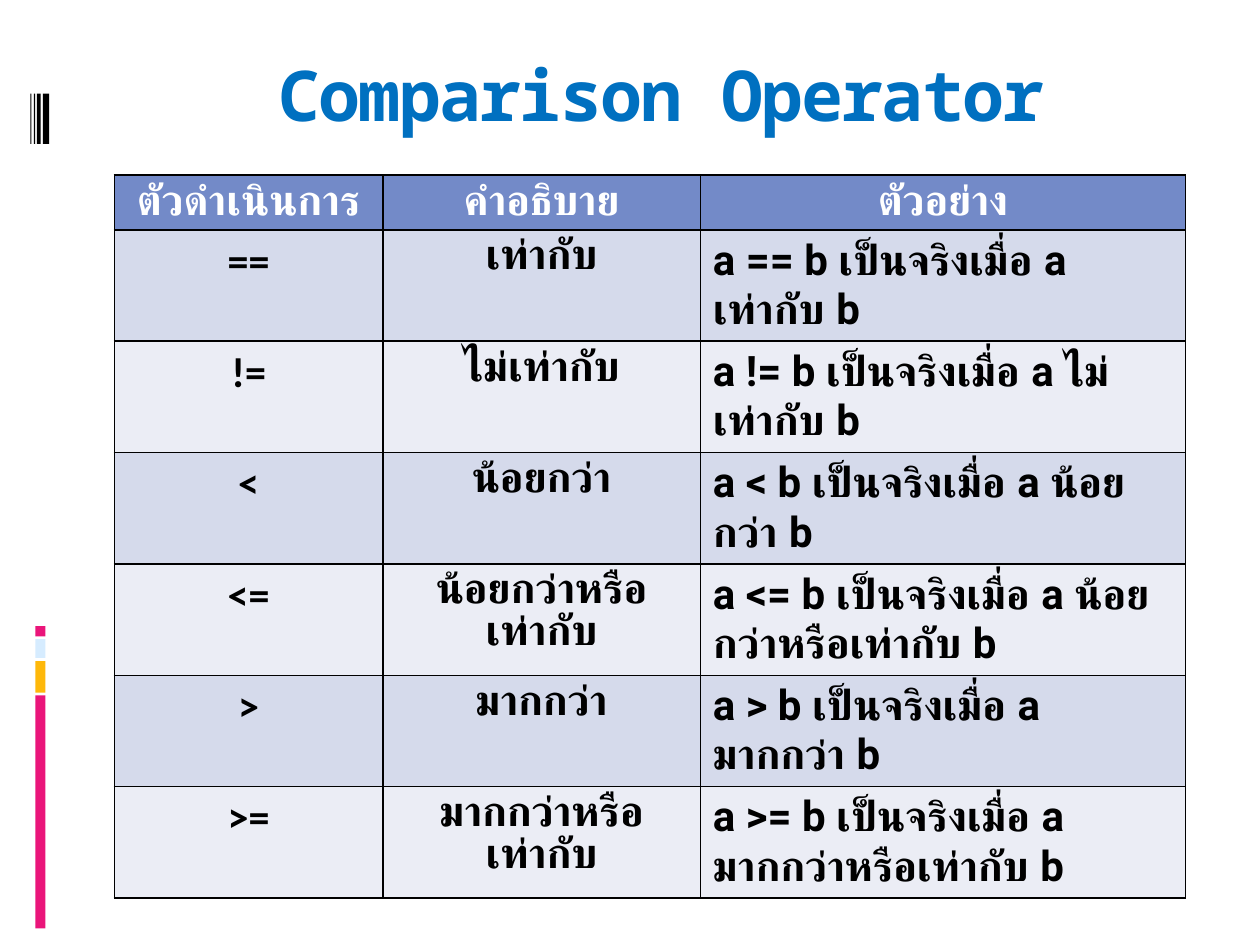
from lxml.etree import SubElement
from pptx import Presentation
from pptx.dml.color import RGBColor
from pptx.enum.shapes import MSO_SHAPE as Shape
from pptx.enum.text import MSO_ANCHOR as Anchor, PP_ALIGN as Align
from pptx.oxml.ns import qn
from pptx.util import Pt

# Content
TITLE = "Comparison Operator"
HEADERS = ["ตัวดำเนินการ", "คำอธิบาย", "ตัวอย่าง"]
OPERATORS = [
    ("==", "เท่ากับ"),
    ("!=", "ไม่เท่ากับ"),
    ("<", "น้อยกว่า"),
    ("<=", "น้อยกว่าหรือเท่ากับ"),
    (">", "มากกว่า"),
    (">=", "มากกว่าหรือเท่ากับ"),
]

THEME = {
    "title": "0070C0", "header": "738AC8", "bands": ("D5DAEB", "EBEDF5"),
    "black": "000000", "white": "FFFFFF",
    "pink": "EA157A", "amber": "FEB80A", "sky": "D6ECFF",
    "title_font": "Noto Sans Mono", "body_font": "Roboto", "symbol_font": "Calibri",
    "title_size": 40, "body_size": 24,
}

# Layout in points
COLUMN_WIDTHS = [153.36, 181.44, 277.2]
ROW_HEIGHT = 29.5
TABLE_LEFT, TABLE_TOP, TABLE_HEIGHT = 65.4, 100.1, 424.8
ACCENT_LEFT, ACCENT_WIDTH = 20.2, 5.8
ACCENTS = [("pink", 397.4, 133.2), ("amber", 377.8, 18),
           ("sky", 365.2, 10.8), ("pink", 357.8, 5.8)]  # colour, top, height
STRIPE_TOP, STRIPE_HEIGHT = 53.5, 28.8
STRIPES = [(24.5, 3.6), (21.1, 2.2), (19.4, 0.7), (17.3, 0.7)]  # left, width


def color(name):
    return RGBColor.from_string(THEME.get(name, name))


def add_bar(slide, left, top, width, height, fill):
    bar = slide.shapes.add_shape(Shape.RECTANGLE, Pt(left), Pt(top), Pt(width), Pt(height))
    bar.shadow.inherit = False
    bar.fill.solid()
    bar.fill.fore_color.rgb = color(fill)
    bar.line.fill.background()


def add_text(paragraph, text, font, size, ink, align):
    paragraph.alignment = align
    run = paragraph.add_run()
    run.text = text
    run.font.name = font
    run.font.size = Pt(size)
    run.font.bold = True
    run.font.color.rgb = color(ink)
    return run


def add_borders(cell):
    properties = cell._tc.get_or_add_tcPr()
    for position, side in enumerate(("a:lnL", "a:lnR", "a:lnT", "a:lnB")):
        line = SubElement(properties, qn(side), w=str(Pt(1)))
        fill = SubElement(line, qn("a:solidFill"))
        SubElement(fill, qn("a:srgbClr"), val=THEME["black"])
        properties.insert(position, line)


def add_operator_table(slide):
    rows = [HEADERS] + [
        (symbol, meaning, f"a {symbol} b เป็นจริงเมื่อ a {meaning} b")
        for symbol, meaning in OPERATORS
    ]
    frame = slide.shapes.add_table(
        len(rows), len(HEADERS), Pt(TABLE_LEFT), Pt(TABLE_TOP),
        Pt(sum(COLUMN_WIDTHS)), Pt(TABLE_HEIGHT))
    table = frame.table
    for column, width in zip(table.columns, COLUMN_WIDTHS):
        column.width = Pt(width)
    for row_index, texts in enumerate(rows):
        table.rows[row_index].height = Pt(ROW_HEIGHT)
        is_header = row_index == 0
        fill = "header" if is_header else THEME["bands"][(row_index - 1) % 2]
        for column_index, text in enumerate(texts):
            cell = table.cell(row_index, column_index)
            cell.fill.solid()
            cell.fill.fore_color.rgb = color(fill)
            add_borders(cell)
            is_symbol = column_index == 0 and not is_header
            is_example = column_index == 2 and not is_header
            add_text(cell.text_frame.paragraphs[0], text,
                     THEME["symbol_font" if is_symbol else "body_font"],
                     THEME["body_size"], "white" if is_header else "black",
                     Align.LEFT if is_example else Align.CENTER)
    frame.height = Pt(TABLE_HEIGHT)


def main():
    presentation = Presentation()
    presentation.slide_width, presentation.slide_height = Pt(720), Pt(540)
    slide = presentation.slides.add_slide(presentation.slide_layouts[5])

    # Side decoration
    for fill, top, height in ACCENTS:
        add_bar(slide, ACCENT_LEFT, top, ACCENT_WIDTH, height, fill)
    for left, width in STRIPES:
        add_bar(slide, left, STRIPE_TOP, width, STRIPE_HEIGHT, "black")

    # Title
    title = slide.shapes.title
    title.left, title.top, title.width, title.height = Pt(72), Pt(26), Pt(612), Pt(72)
    title.text_frame.vertical_anchor = Anchor.TOP
    run = add_text(title.text_frame.paragraphs[0], TITLE, THEME["title_font"],
                   THEME["title_size"], "title", Align.CENTER)
    run.font._element.set("spc", "-100")

    # Table
    add_operator_table(slide)
    presentation.save("out.pptx")


if __name__ == "__main__":
    main()
